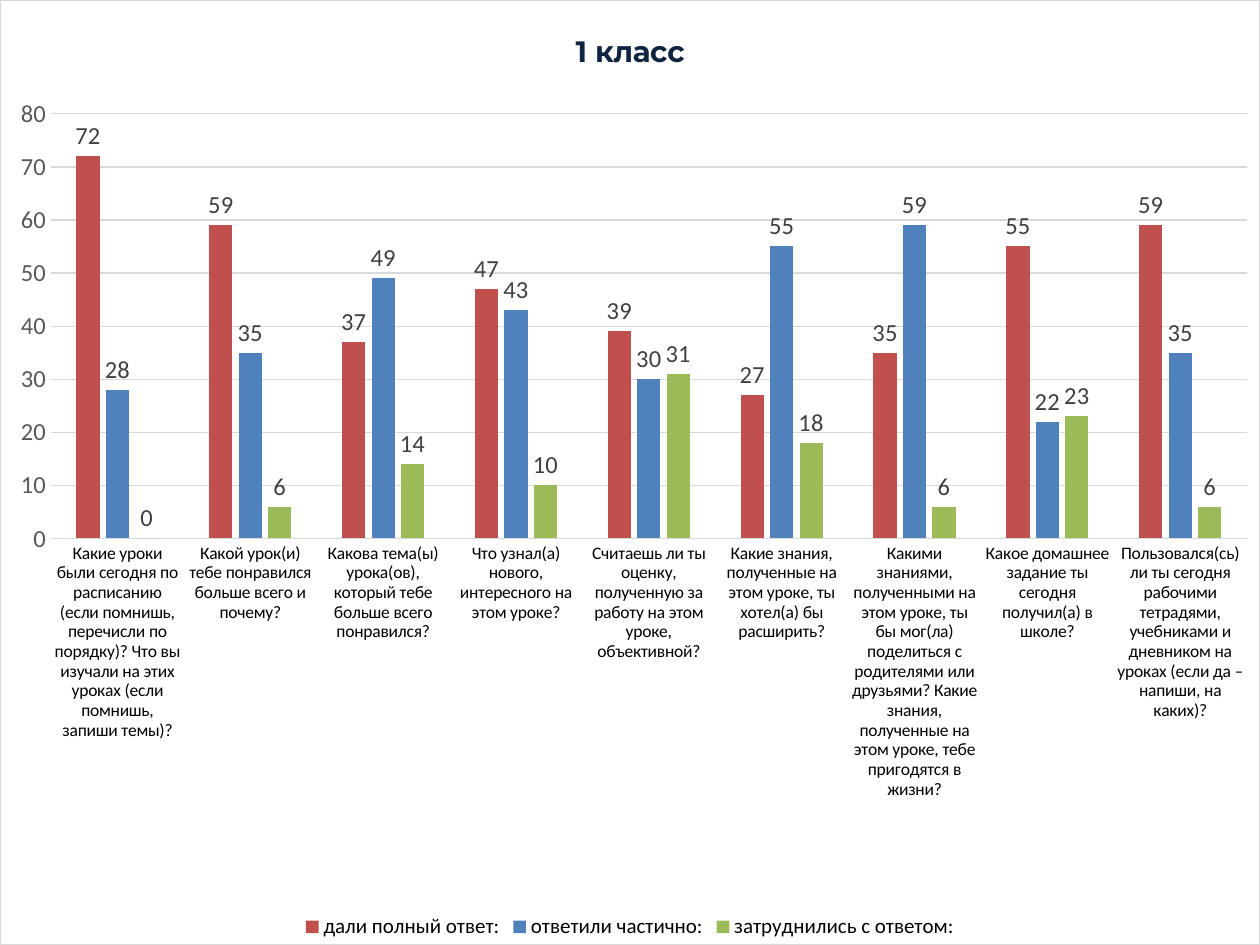
"""Build a slide with a column chart of first-grade answers."""
from lxml.etree import fromstring
from pptx import Presentation
from pptx.chart.data import CategoryChartData as Data
from pptx.dml.color import RGBColor
from pptx.enum.chart import XL_CHART_TYPE as Kind
from pptx.enum.chart import XL_LABEL_POSITION as Spot
from pptx.enum.chart import XL_LEGEND_POSITION as Side
from pptx.enum.chart import XL_TICK_MARK as Tick
from pptx.util import Pt

WIDE, HIGH = Pt(720), Pt(540)
BLACK = RGBColor(0x00, 0x00, 0x00)
NAVY = RGBColor(0x0F, 0x24, 0x3E)
DARK = RGBColor(0x40, 0x40, 0x40)
GREY = RGBColor(0x59, 0x59, 0x59)
PALE = RGBColor(0xD9, 0xD9, 0xD9)
WHITE = RGBColor(0xFF, 0xFF, 0xFF)
RED = RGBColor(0xC0, 0x50, 0x4D)
BLUE = RGBColor(0x4F, 0x81, 0xBD)
GREEN = RGBColor(0x9B, 0xBB, 0x59)

ASKED = [
    "Какие уроки были сегодня по расписанию (если помнишь, перечисли по порядку)? "
    "Что вы изучали на этих уроках (если помнишь, запиши темы)?",
    "Какой урок(и) тебе понравился больше всего и почему?",
    "Какова тема(ы) урока(ов), который тебе больше всего понравился?",
    "Что узнал(а) нового, интересного на этом уроке?",
    "Считаешь ли ты оценку, полученную за работу на этом уроке, объективной?",
    "Какие знания, полученные на этом уроке, ты хотел(а) бы расширить?",
    "Какими знаниями, полученными на этом уроке, ты бы мог(ла) поделиться "
    "с родителями или друзьями? Какие знания, полученные на этом уроке, "
    "тебе пригодятся в жизни?",
    "Какое домашнее задание ты сегодня получил(а) в школе?",
    "Пользовался(сь) ли ты сегодня рабочими тетрадями, учебниками и дневником "
    "на уроках (если да – напиши, на каких)?",
]
GIVEN = [
    ("дали полный ответ:", RED, (72, 59, 37, 47, 39, 27, 35, 55, 59)),
    ("ответили частично:", BLUE, (28, 35, 49, 43, 30, 55, 59, 22, 35)),
    ("затруднились с ответом:", GREEN, (0, 6, 14, 10, 31, 18, 6, 23, 6)),
]
SPACE = "http://schemas.openxmlformats.org/drawingml/2006/chart"
MAIN = "http://schemas.openxmlformats.org/drawingml/2006/main"


def style(font, size=14, color=BLACK, face="Calibri", bold=False):
    """Set the look of a font."""
    font.size, font.name, font.bold = Pt(size), face, bold
    font.color.rgb = color


def write(frame, text, **look):
    """Put text in a frame with the given font look."""
    run = frame.paragraphs[0].add_run()
    run.text = text
    style(run.font, **look)


def rule(line):
    """Make a line thin and pale."""
    line.color.rgb = PALE
    line.width = Pt(0.75)


def add_chart(slide):
    """Add the column chart over the whole slide."""
    data = Data()
    data.categories = ASKED
    for name, _, vals in GIVEN:
        data.add_series(name, vals)
    frame = slide.shapes.add_chart(Kind.COLUMN_CLUSTERED, 0, 0, WIDE, HIGH, data)
    chart = frame.chart
    style(chart.font)
    return chart


def paint_bars(plot):
    """Color the bars and show their values."""
    plot.gap_width, plot.overlap = 219, -27
    plot.vary_by_categories = False
    for bars, (_, color, _) in zip(plot.series, GIVEN):
        bars.format.fill.solid()
        bars.format.fill.fore_color.rgb = color
        tags = bars.data_labels
        tags.show_value = True
        tags.position = Spot.OUTSIDE_END
        style(tags.font, color=DARK)


def set_axis(axis, **look):
    """Remove the tick marks and set the label font."""
    axis.major_tick_mark = axis.minor_tick_mark = Tick.NONE
    style(axis.tick_labels.font, **look)


def set_scale(axis):
    """Set the range and grid of the value axis."""
    axis.minimum_scale, axis.maximum_scale, axis.major_unit = 0, 80, 10
    axis.format.line.fill.background()
    axis.has_major_gridlines = True
    rule(axis.major_gridlines.format.line)


def add_key(chart):
    """Add the legend below the plot."""
    chart.has_legend = True
    chart.legend.position = Side.BOTTOM
    chart.legend.include_in_layout = False
    style(chart.legend.font, size=12)


def place_plot(chart, **box):
    """Place the inner plot area by fractions of the chart."""
    area = chart.element.find(f".//{{{SPACE}}}plotArea")
    for old in area.findall(f"{{{SPACE}}}layout"):
        area.remove(old)
    modes = '<c:xMode val="edge"/><c:yMode val="edge"/>'
    sides = "".join(f'<c:{key} val="{val}"/>' for key, val in box.items())
    area.insert(0, fromstring(
        f'<c:layout xmlns:c="{SPACE}"><c:manualLayout><c:layoutTarget val="inner"/>'
        f"{modes}{sides}</c:manualLayout></c:layout>"))


def fill_back(chart):
    """Give the chart a white ground and a pale border."""
    chart.element.find(f"{{{SPACE}}}chart").addnext(fromstring(
        f'<c:spPr xmlns:c="{SPACE}" xmlns:a="{MAIN}">'
        f'<a:solidFill><a:srgbClr val="{WHITE}"/></a:solidFill>'
        f'<a:ln w="{Pt(0.75)}"><a:solidFill><a:srgbClr val="{PALE}"/></a:solidFill>'
        "</a:ln></c:spPr>"))


def main():
    """Build and save the slide."""
    deck = Presentation()
    deck.slide_width, deck.slide_height = WIDE, HIGH
    slide = deck.slides.add_slide(deck.slide_layouts[6])
    chart = add_chart(slide)
    chart.has_title = True
    chart.chart_title.include_in_layout = False
    write(chart.chart_title.text_frame, "1 класс",
          size=16.8, color=NAVY, face="Montserrat", bold=True)
    paint_bars(chart.plots[0])
    set_axis(chart.category_axis, size=10)
    rule(chart.category_axis.format.line)
    set_axis(chart.value_axis, color=GREY)
    set_scale(chart.value_axis)
    add_key(chart)
    place_plot(chart, x=0.04, y=0.12, w=0.95, h=0.45)
    fill_back(chart)
    deck.save("out.pptx")


if __name__ == "__main__":
    main()
